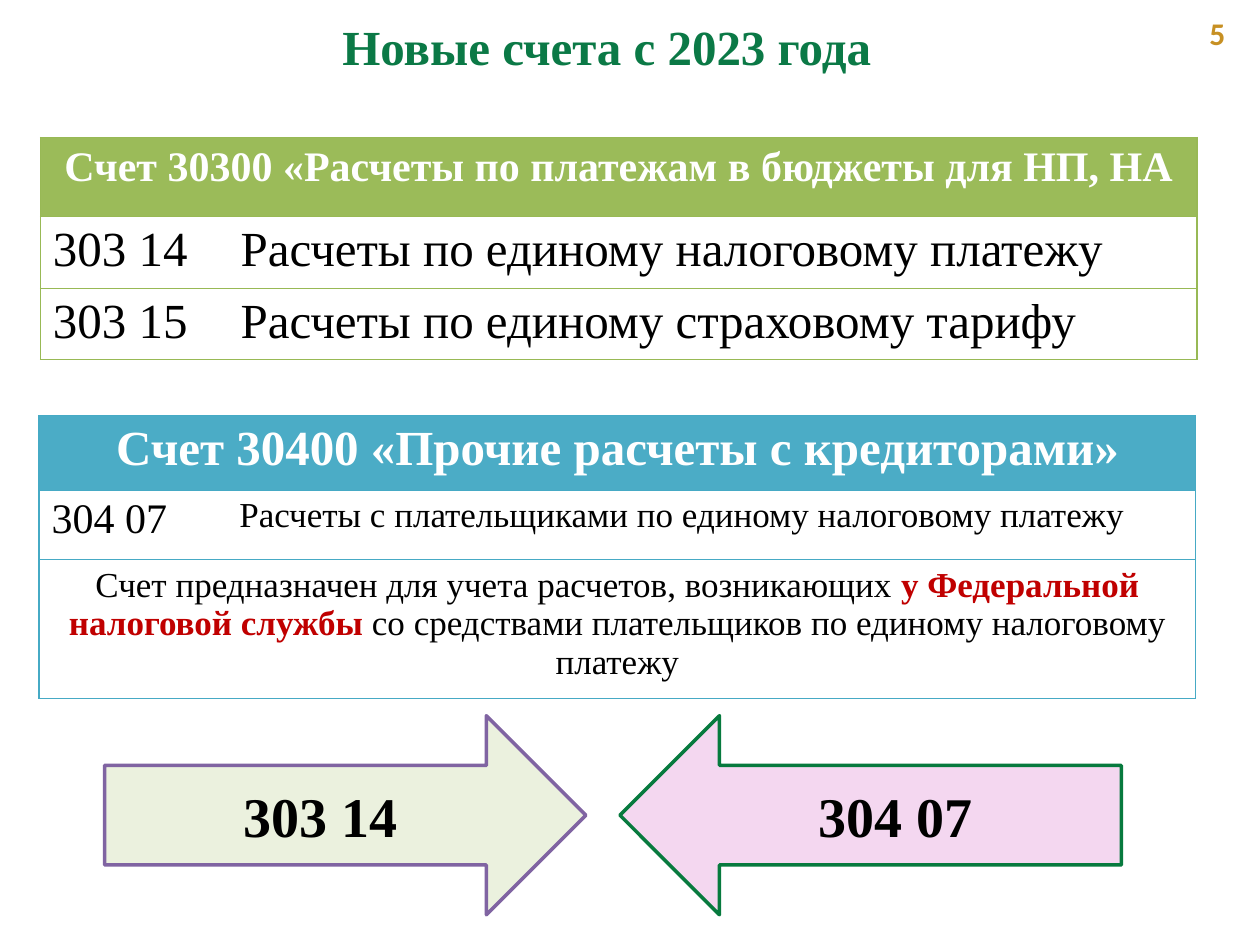
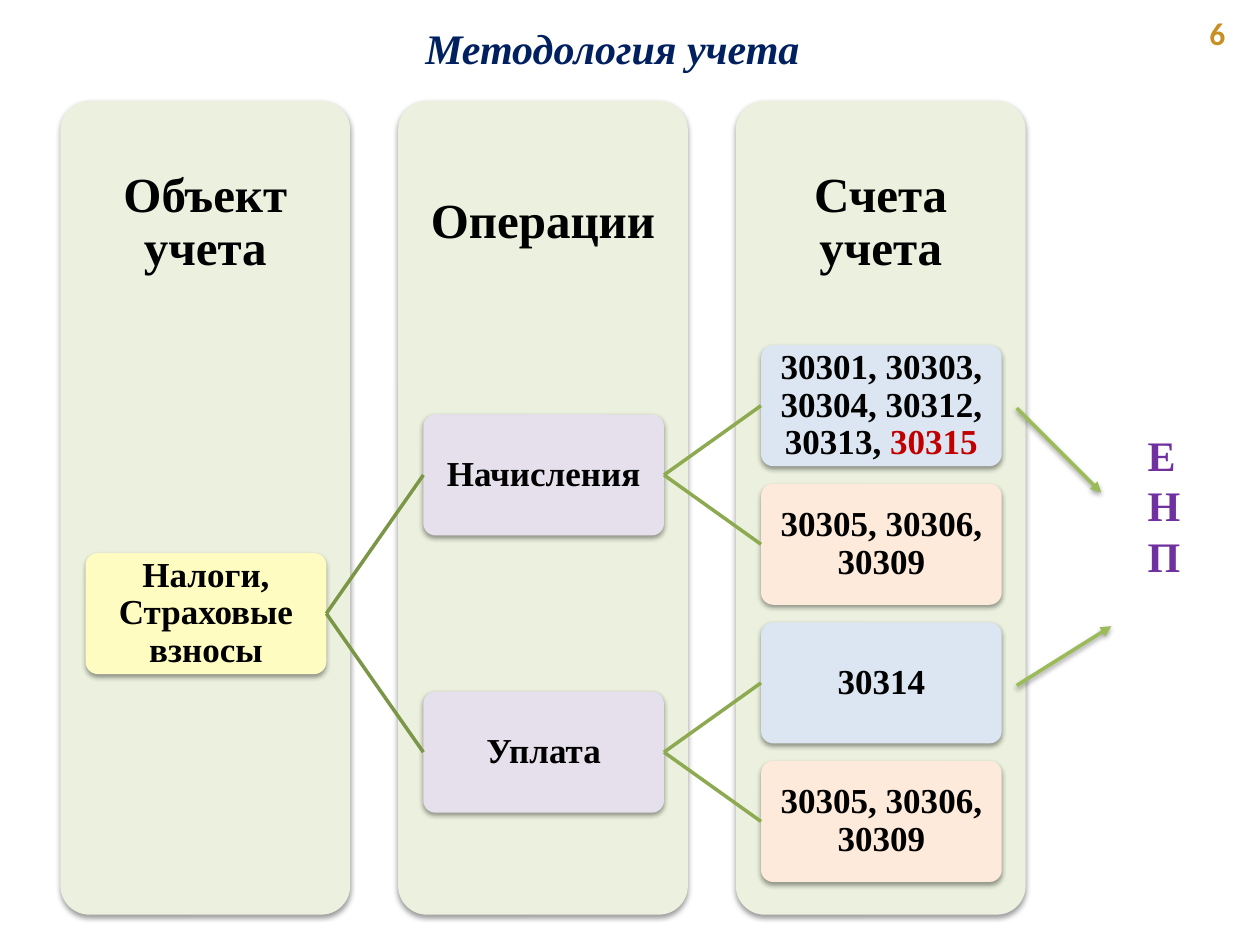
"""Build two slides on the new tax accounts and the accounting method."""
from dataclasses import dataclass

from lxml import etree
from pptx import Presentation
from pptx.dml.color import RGBColor
from pptx.enum.shapes import MSO_CONNECTOR, MSO_SHAPE
from pptx.enum.text import MSO_ANCHOR, PP_ALIGN
from pptx.oxml.ns import qn
from pptx.util import Inches, Pt

LEFT, MID = PP_ALIGN.LEFT, PP_ALIGN.CENTER
TOP, CORE = MSO_ANCHOR.TOP, MSO_ANCHOR.MIDDLE
ROUND, BOX = MSO_SHAPE.ROUNDED_RECTANGLE, MSO_SHAPE.RECTANGLE
RIGHT, BACK = MSO_SHAPE.RIGHT_ARROW, MSO_SHAPE.LEFT_ARROW
LINE = MSO_CONNECTOR.STRAIGHT
SERIF, SANS = "Times New Roman", "Calibri"

HUES = {
    "black": "000000", "white": "FFFFFF", "red": "C00000",
    "gold": "C79023", "green": "0B7946", "navy": "002060",
    "plum": "7030A0", "pale": "EBF1DE", "pink": "F4D7F0",
    "violet": "8064A2", "pine": "077A3E", "olive": "9BBB59",
    "moss": "98B955", "teal": "4BACC6", "sea": "46AAC5",
    "lemon": "FFFCC1", "lilac": "E6E0EC", "sky": "DCE6F2",
    "peach": "FDEADA", "stem": "7C9647", "twig": "8DAA51",
}


@dataclass(frozen=True)
class Run:
    """A piece of text with its colour and weight."""
    text: str
    hue: str = "black"
    bold: bool = True


@dataclass(frozen=True)
class Style:
    """How a block of text is set."""
    size: float
    align: PP_ALIGN = MID
    anchor: MSO_ANCHOR = CORE
    name: str = SERIF
    slant: bool = False
    gap: float = 1.0
    side: float = 0.1
    edge: float = 0.05


@dataclass(frozen=True)
class Cell:
    """The content of one table cell."""
    runs: tuple
    size: float
    align: PP_ALIGN = LEFT


@dataclass(frozen=True)
class Grid:
    """A two-column account table; a row with one cell spans both."""
    left: float
    top: float
    fill: str
    rule: str
    highs: tuple
    rows: tuple


@dataclass(frozen=True)
class Arrow:
    """A block arrow with a label."""
    kind: MSO_SHAPE
    left: float
    width: float
    text: str
    fill: str
    rule: str


@dataclass(frozen=True)
class Card:
    """A box of the tree at a column and a row step."""
    col: int
    row: float
    fill: str
    runs: tuple


WIDTHS = (1.49, 7.69)
GRIDS = (
    Grid(0.32, 1.09, "olive", "moss", (0.63, 0.53, 0.53), (
        (Cell((Run("Счет 30300 «Расчеты по платежам в бюджеты для НП, НА", "white"),), 24, MID),),
        (Cell((Run("303 14", bold=False),), 28),
         Cell((Run("Расчеты по единому налоговому платежу", bold=False),), 28)),
        (Cell((Run("303 15", bold=False),), 28),
         Cell((Run("Расчеты по единому страховому тарифу", bold=False),), 28)),
    )),
    Grid(0.31, 3.3, "teal", "sea", (0.59, 0.55, 1.01), (
        (Cell((Run("Счет 30400 «Прочие расчеты с кредиторами»", "white"),), 28, MID),),
        (Cell((Run("304 07", bold=False),), 24),
         Cell((Run("Расчеты с плательщиками по единому налоговому платежу", bold=False),), 20)),
        (Cell((Run("Счет предназначен для учета расчетов, возникающих ", bold=False),
               Run("у Федеральной налоговой службы", "red"),
               Run(" со средствами плательщиков по единому налоговому платежу", bold=False)),
              20, MID),),
    )),
)
ARROWS = (
    Arrow(RIGHT, 0.83, 3.82, "303 14", "pale", "violet"),
    Arrow(BACK, 4.92, 3.98, "304 07", "pink", "pine"),
)

HEADS = ("Объект учета", "Операции", "Счета учета")
STEP, RISE = 2.68, 1.1
CARD_X, CARD_Y, CARD_W, CARD_H = 0.68, 2.74, 1.91, 0.96
OTHER = (Run("30305, 30306, 30309"),)
CARDS = (
    Card(0, 1.5, "lemon", (Run("Налоги, Страховые взносы"),)),
    Card(1, 0.5, "lilac", (Run("Начисления"),)),
    Card(1, 2.5, "lilac", (Run("Уплата"),)),
    Card(2, 0, "sky", (Run("30301, 30303, 30304, 30312, 30313, "), Run("30315", "red"))),
    Card(2, 1, "peach", OTHER),
    Card(2, 2, "sky", (Run("30314"),)),
    Card(2, 3, "peach", OTHER),
)
LINKS = ((0, 1), (0, 2), (1, 3), (1, 4), (2, 5), (2, 6))
LINK_HUES = ("stem", "twig")
FLOWS = ((8.07, 3.24, 8.74, 3.91), (8.07, 5.44, 8.82, 4.97))


def tint(key: str) -> RGBColor:
    """Return the named colour."""
    return RGBColor.from_string(HUES[key])


def apply(part, values: dict) -> None:
    """Set each attribute in the dict on the part."""
    for key, value in values.items():
        setattr(part, key, value)


def write(para, runs: tuple, style: Style) -> None:
    """Fill a paragraph with styled runs."""
    apply(para, {"alignment": style.align, "line_spacing": style.gap})
    for item in runs:
        run = para.add_run()
        run.text = item.text
        apply(run.font, {"name": style.name, "size": Pt(style.size),
                         "bold": item.bold, "italic": style.slant})
        run.font.color.rgb = tint(item.hue)


def label(shape, runs: tuple, style: Style) -> None:
    """Lay out the text frame of a shape and write in it."""
    frame = shape.text_frame
    side, edge = Inches(style.side), Inches(style.edge)
    apply(frame, {"word_wrap": True, "vertical_anchor": style.anchor,
                  "margin_left": side, "margin_right": side,
                  "margin_top": edge, "margin_bottom": edge})
    write(frame.paragraphs[0], runs, style)


def text(slide, spot: tuple, runs: tuple, style: Style):
    """Add a text box at left, top, width, height."""
    box = slide.shapes.add_textbox(*map(Inches, spot))
    label(box, runs, style)
    return box


def shade(shape, soft: bool) -> None:
    """Give a shape a soft drop shadow or none at all."""
    props = shape.element.spPr
    for old in props.findall(qn("a:effectLst")):
        props.remove(old)
    glow = etree.SubElement(props, qn("a:effectLst"))
    if soft:
        drop = etree.SubElement(glow, qn("a:outerShdw"), blurRad=str(Pt(3.1)),
                                dist=str(Pt(1.6)), dir="5400000", rotWithShape="0")
        tone = etree.SubElement(drop, qn("a:srgbClr"), val=HUES["black"])
        etree.SubElement(tone, qn("a:alpha"), val="38000")


def panel(slide, kind: MSO_SHAPE, spot: tuple, fill: str, rule: str = ""):
    """Add a filled shape, outlined if a rule colour is given."""
    shape = slide.shapes.add_shape(kind, *map(Inches, spot))
    shape.fill.solid()
    shape.fill.fore_color.rgb = tint(fill)
    if rule:
        shape.line.color.rgb = tint(rule)
        shape.line.width = Pt(2)
    else:
        shape.line.fill.background()
    if kind == ROUND:
        shape.adjustments[0] = 0.1
    shade(shape, kind == ROUND)
    return shape


def wire(slide, ends: tuple, hue: str, tip: bool = False) -> None:
    """Add a straight line, with a tip and shadow if asked."""
    line = slide.shapes.add_connector(LINE, *map(Inches, ends))
    line.line.color.rgb = tint(hue)
    line.line.width = Pt(2)
    if tip:
        etree.SubElement(line.element.spPr.find(qn("a:ln")), qn("a:tailEnd"), type="triangle")
    shade(line, tip)


def border(cell, sides: dict) -> None:
    """Draw cell borders; an empty colour hides a side."""
    props = cell.fill and cell.element.get_or_add_tcPr() if hasattr(cell, "element") else cell._tc.get_or_add_tcPr()
    for spot, (side, hue) in enumerate(sides.items()):
        edge = etree.Element(qn("a:" + side), w=str(Pt(0.75)))
        if hue:
            paint = etree.SubElement(edge, qn("a:solidFill"))
            etree.SubElement(paint, qn("a:srgbClr"), val=HUES[hue])
        else:
            etree.SubElement(edge, qn("a:noFill"))
        props.insert(spot, edge)


def chart(slide, grid: Grid) -> None:
    """Add an account table."""
    spot = (grid.left, grid.top, sum(WIDTHS), sum(grid.highs))
    table = slide.shapes.add_table(len(grid.rows), len(WIDTHS), *map(Inches, spot)).table
    apply(table, {"first_row": False, "horz_banding": False})
    for col, width in zip(table.columns, WIDTHS):
        col.width = Inches(width)
    for num, (high, row) in enumerate(zip(grid.highs, grid.rows)):
        table.rows[num].height = Inches(high)
        whole = len(row) == 1
        if whole:
            table.cell(num, 0).merge(table.cell(num, 1))
        for pos in range(len(WIDTHS)):
            cell = table.cell(num, pos)
            if num == 0:
                cell.fill.solid()
                cell.fill.fore_color.rgb = tint(grid.fill)
            else:
                cell.fill.background()
            border(cell, {"lnL": grid.rule if pos == 0 else "",
                          "lnR": grid.rule if pos or whole else "",
                          "lnT": grid.rule, "lnB": grid.rule})
        for pos, item in enumerate(row):
            para = table.cell(num, pos).text_frame.paragraphs[0]
            write(para, item.runs, Style(item.size, item.align))


def start(deck, num: str, title: Run, spot: tuple, style: Style):
    """Add a blank slide with its number and title."""
    slide = deck.slides.add_slide(deck.slide_layouts[6])
    text(slide, (9.5, 0.06, 0.5, 0.4), (Run(num, "gold"),), Style(18, LEFT, TOP, SANS))
    text(slide, spot, (title,), style)
    return slide


def accounts(deck) -> None:
    """Build the slide of new accounts."""
    slide = start(deck, "5", Run("Новые счета с 2023 года", "green"),
                  (0.22, 0.08, 9.19, 0.57), Style(28, anchor=TOP))
    for grid in GRIDS:
        chart(slide, grid)
    for item in ARROWS:
        shape = panel(slide, item.kind, (item.left, 5.68, item.width, 1.58), item.fill, item.rule)
        label(shape, (Run(item.text),), Style(32))


def corner(card: Card) -> tuple:
    """Return the left and top of a card."""
    return CARD_X + STEP * card.col, CARD_Y + RISE * card.row


def method(deck) -> None:
    """Build the slide of the accounting method."""
    slide = start(deck, "6", Run("Методология учета", "navy"),
                  (0.59, 0.13, 8.54, 0.5), Style(24, anchor=TOP, slant=True))
    for num, head in enumerate(HEADS):
        left = 0.48 + STEP * num
        panel(slide, ROUND, (left, 0.8, 2.3, 6.46), "pale")
        text(slide, (left, 0.8, 2.3, 1.94), (Run(head),), Style(28, gap=0.9, side=0.22, edge=0.22))
    for card in CARDS:
        shape = panel(slide, ROUND, (*corner(card), CARD_W, CARD_H), card.fill)
        label(shape, card.runs, Style(20, gap=0.9, side=0, edge=0))
    for first, last in LINKS:
        (x1, y1), (x2, y2) = corner(CARDS[first]), corner(CARDS[last])
        ends = (x1 + CARD_W, y1 + CARD_H / 2, x2, y2 + CARD_H / 2)
        wire(slide, ends, LINK_HUES[CARDS[first].col])
    for ends in FLOWS:
        wire(slide, ends, "olive", True)
    box = text(slide, (9.01, 3.36, 0.64, 2.26), (Run("ЕНП", "plum"),), Style(24, LEFT))
    box.element.txBody.find(qn("a:bodyPr")).set("vert", "wordArtVert")


def main() -> None:
    """Build and save the deck."""
    deck = Presentation()
    apply(deck, {"slide_width": Inches(10), "slide_height": Inches(7.5)})
    accounts(deck)
    method(deck)
    deck.save("out.pptx")


if __name__ == "__main__":
    main()
